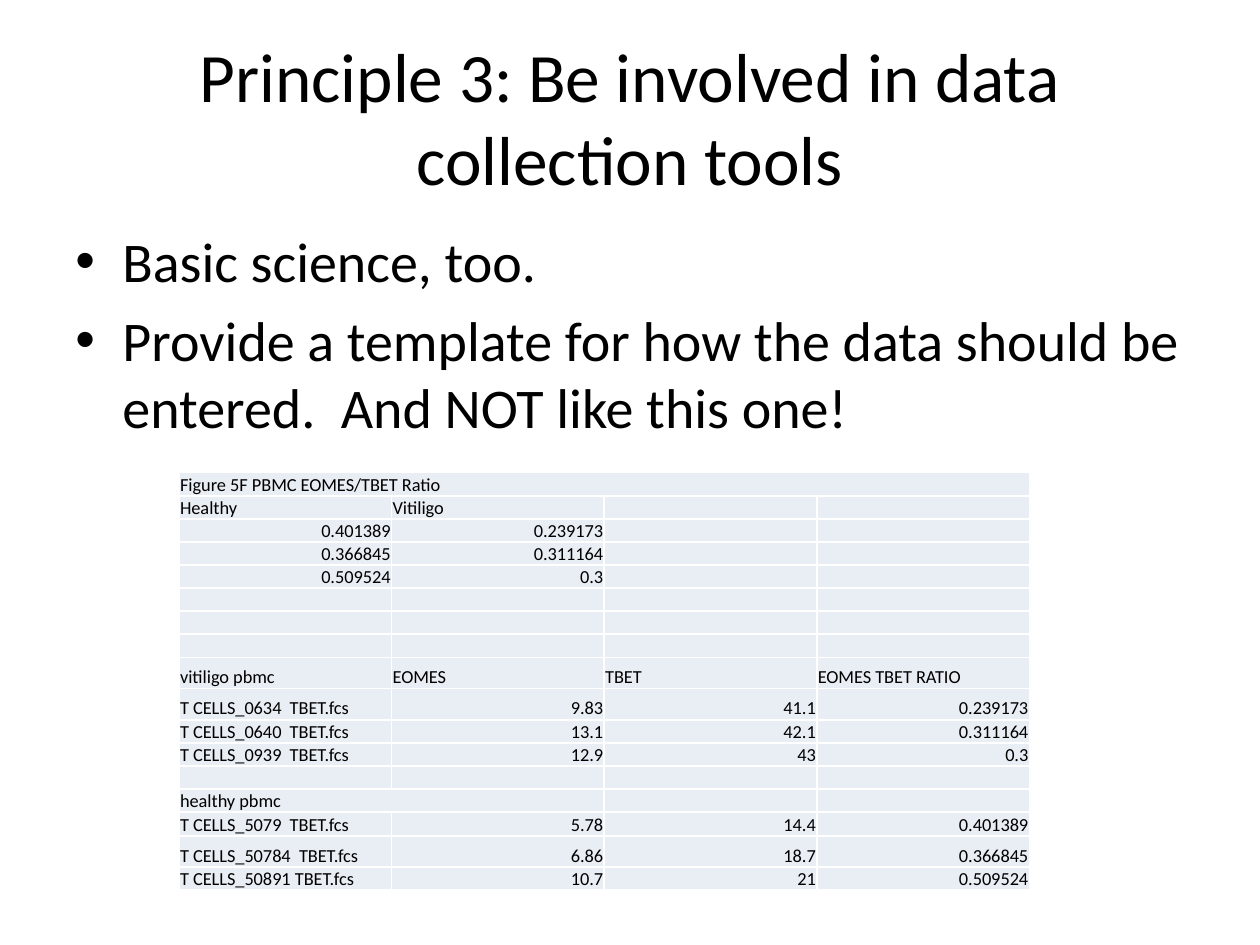
from dataclasses import dataclass

from lxml import etree
from pptx import Presentation
from pptx.dml.color import RGBColor
from pptx.enum.text import MSO_ANCHOR, PP_ALIGN
from pptx.oxml.ns import qn
from pptx.util import Cm, Pt

LEFT, MID, RIGHT = PP_ALIGN.LEFT, PP_ALIGN.CENTER, PP_ALIGN.RIGHT
TOP, CENTER, BOTTOM = MSO_ANCHOR.TOP, MSO_ANCHOR.MIDDLE, MSO_ANCHOR.BOTTOM


@dataclass(frozen=True)
class Theme:
    font: str = "Calibri"
    ink: str = "000000"
    fill: str = "E9EDF4"
    rule: str = "FFFFFF"
    title: float = 39.6
    body: float = 32
    cell: float = 10.5


THEME = Theme()
TITLE = "Principle 3: Be involved in data collection tools"
POINTS = [
    "Basic science, too.",
    "Provide a template for how the data should be entered.  And NOT like this one!",
]
ROWS = [
    ["Figure 5F PBMC EOMES/TBET Ratio"],
    ["Healthy", "Vitiligo"],
    [0.401389, 0.239173],
    [0.366845, 0.311164],
    [0.509524, 0.3],
    [],
    [],
    [],
    ["vitiligo pbmc", "EOMES", "TBET", "EOMES TBET RATIO"],
    ["T CELLS_0634  TBET.fcs", 9.83, 41.1, 0.239173],
    ["T CELLS_0640  TBET.fcs", 13.1, 42.1, 0.311164],
    ["T CELLS_0939  TBET.fcs", 12.9, 43, 0.3],
    [],
    ["healthy pbmc"],
    ["T CELLS_5079  TBET.fcs", 5.78, 14.4, 0.401389],
    ["T CELLS_50784  TBET.fcs", 6.86, 18.7, 0.366845],
    ["T CELLS_50891 TBET.fcs", 10.7, 21, 0.509524],
]
SPANS = {0: 4, 13: 2}
COLS = 4
LOW, HIGH = 0.46, 0.63
TALL = {8: HIGH, 9: HIGH, 14: 0.48, 15: HIGH}


def write(para, text, size, align=LEFT):
    para.alignment = align
    run = para.add_run()
    run.text = text
    run.font.name = THEME.font
    run.font.size = Pt(size)
    run.font.color.rgb = RGBColor.from_string(THEME.ink)


def add_box(slide, left, top, width, height, anchor):
    box = slide.shapes.add_textbox(Cm(left), Cm(top), Cm(width), Cm(height))
    frame = box.text_frame
    frame.word_wrap = True
    frame.vertical_anchor = anchor
    return frame


def add_points(frame):
    for i, text in enumerate(POINTS):
        para = frame.add_paragraph() if i else frame.paragraphs[0]
        write(para, text, THEME.body)
        para.space_before = Pt(THEME.body * 0.2)
        props = para._p.get_or_add_pPr()
        props.set("marL", str(Cm(0.95)))
        props.set("indent", str(-Cm(0.95)))
        font = etree.SubElement(props, qn("a:buFont"))
        font.set("typeface", "Arial")
        etree.SubElement(props, qn("a:buChar")).set("char", "•")


def style(cell):
    cell.margin_left = cell.margin_right = cell.margin_top = Cm(0.02)
    cell.margin_bottom = 0
    cell.vertical_anchor = BOTTOM
    props = cell._tc.get_or_add_tcPr()
    for side in ("L", "R", "T", "B"):
        line = etree.SubElement(props, qn(f"a:ln{side}"), w=str(Pt(1)))
        paint = etree.SubElement(line, qn("a:solidFill"))
        etree.SubElement(paint, qn("a:srgbClr"), val=THEME.rule)
    cell.fill.solid()
    cell.fill.fore_color.rgb = RGBColor.from_string(THEME.fill)


def put(cell, value):
    para = cell.text_frame.paragraphs[0]
    if value is None:
        size = str(round(THEME.cell * 100))
        etree.SubElement(para._p, qn("a:endParaRPr"), sz=size)
    else:
        align = LEFT if isinstance(value, str) else RIGHT
        write(para, str(value), THEME.cell, align)


def add_grid(slide):
    highs = [TALL.get(r, LOW) for r in range(len(ROWS))]
    shape = slide.shapes.add_table(
        len(ROWS), COLS, Cm(3.61), Cm(9.53), Cm(17.14), Cm(sum(highs)))
    grid = shape.table
    grid.first_row = grid.horz_banding = False
    for r, (row, high) in enumerate(zip(ROWS, highs)):
        grid.rows[r].height = Cm(high)
        for c in range(COLS):
            cell = grid.cell(r, c)
            style(cell)
            put(cell, row[c] if c < len(row) else None)
    for r, span in SPANS.items():
        grid.cell(r, 0).merge(grid.cell(r, span - 1))


def main():
    deck = Presentation()
    deck.slide_width, deck.slide_height = Cm(25.4), Cm(19.05)
    slide = deck.slides.add_slide(deck.slide_layouts[6])
    head = add_box(slide, 1.27, 0.76, 22.86, 3.18, CENTER)
    write(head.paragraphs[0], TITLE, THEME.title, MID)
    add_points(add_box(slide, 1.27, 4.45, 22.86, 5.08, TOP))
    add_grid(slide)
    deck.save("out.pptx")


if __name__ == "__main__":
    main()
